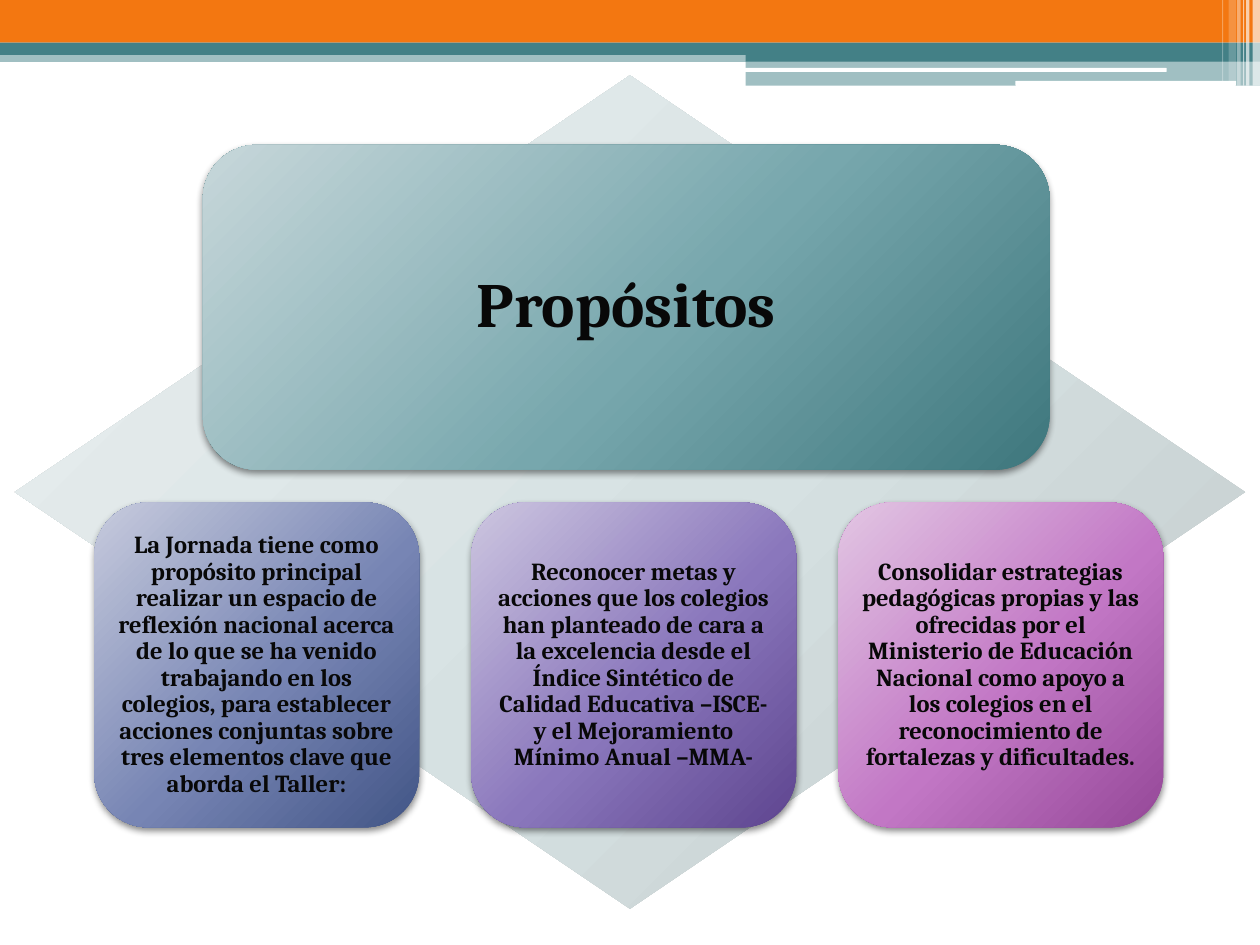
from lxml import etree
from pptx import Presentation
from pptx.dml.color import RGBColor
from pptx.enum.shapes import MSO_SHAPE
from pptx.enum.text import MSO_ANCHOR, MSO_AUTO_SIZE, PP_ALIGN
from pptx.oxml.ns import qn
from pptx.util import Cm, Pt

RECTANGLE = MSO_SHAPE.RECTANGLE
ROUNDED = MSO_SHAPE.ROUNDED_RECTANGLE
DIAMOND = MSO_SHAPE.DIAMOND
MIDDLE = MSO_ANCHOR.MIDDLE
CENTER = PP_ALIGN.CENTER
NO_AUTOFIT = MSO_AUTO_SIZE.NONE

FONT = "Cambria"
COLORS = {"orange": "F37711", "teal": "438086", "white": "FFFFFF", "text": "080808", "shadow": "000000"}
GRADIENTS = {
    "pale": ("EBF0F1", "D6E1E2", "C1C9CA"),
    "teal": ("C7D7DA", "77A7AD", "3E777D"),
    "blue": ("C7CBDD", "7785B4", "425586"),
    "violet": ("CDC6E0", "8A77BC", "5E458F"),
    "pink": ("E2C6E3", "C277C5", "954898"),
}
GRADIENT_STOPS = (0, 55, 100)
GRADIENT_CENTER = {"l": -40, "t": -90, "r": 140, "b": 190}

# Content; lengths in centimetres
SLIDE_SIZE = (25.4, 19.05)
TITLE = "Propósitos"
PURPOSES = [
    (1.9, "blue",
     "La Jornada tiene como propósito principal realizar un espacio de reflexión nacional "
     "acerca de lo que se ha venido trabajando en los colegios, para establecer acciones "
     "conjuntas sobre tres elementos clave que aborda el Taller:"),
    (9.5, "violet",
     "Reconocer metas y acciones que los colegios han planteado de cara a la excelencia "
     "desde el Índice Sintético de Calidad Educativa –ISCE- y el Mejoramiento Mínimo Anual –MMA-"),
    (16.9, "pink",
     "Consolidar estrategias pedagógicas propias y las ofrecidas por el Ministerio de Educación "
     "Nacional como apoyo a los colegios en el reconocimiento de fortalezas y dificultades."),
]
# Header bands: kind, left, top, width, height, color, opacity in percent
BANDS = [
    (RECTANGLE, 0, 1.02, 25.4, 0.23, "teal", 50),
    (RECTANGLE, 0, 0, 25.4, 0.86, "orange", 100),
    (RECTANGLE, 0, 0.86, 25.4, 0.25, "teal", 100),
    (RECTANGLE, 15.03, 0.99, 10.37, 0.25, "teal", 100),
    (RECTANGLE, 15.03, 1.23, 10.37, 0.5, "teal", 50),
    (ROUNDED, 15.01, 1.37, 8.51, 0.08, "white", 100),
    (ROUNDED, 20.47, 1.63, 4.45, 0.1, "white", 100),
]
# White strips at the right edge: left, width, height, opacity in percent
STRIPS = [
    (25.25, 0.15, 1.73, 65),
    (25.12, 0.07, 1.73, 65),
    (25.06, 0.02, 1.73, 60),
    (24.94, 0.07, 1.73, 40),
    (24.77, 0.15, 1.63, 20),
    (24.64, 0.02, 1.63, 30),
]
DIAMOND_BOX = (0.3, 1.52, 24.8, 16.8)
TITLE_CARD = (4.09, 2.92, 17.07, 6.55)
CARD_TOP, CARD_SIZE = 10.13, 6.55
CORNER_INSET = 0.32


def add_element(parent, tag, **attributes):
    return etree.SubElement(parent, qn(tag), {name: str(value) for name, value in attributes.items()})


def add_color(parent, color, opacity):
    element = add_element(parent, "a:srgbClr", val=color)
    if opacity < 100:
        add_element(element, "a:alpha", val=opacity * 1000)


def add_plain_shape(slide, kind, box):
    shape = slide.shapes.add_shape(kind, *(Cm(length) for length in box))
    shape.shadow.inherit = False
    shape.line.fill.background()
    return shape


def add_band(slide, kind, box, color, opacity):
    shape = add_plain_shape(slide, kind, box)
    shape.fill.solid()
    shape.fill.fore_color.rgb = RGBColor.from_string(COLORS[color])
    if opacity < 100:
        color_element = shape._element.spPr.find(".//" + qn("a:srgbClr"))
        add_element(color_element, "a:alpha", val=opacity * 1000)


def add_gradient_shape(slide, kind, box, gradient):
    shape = add_plain_shape(slide, kind, box)
    shape.fill.background()
    properties = shape._element.spPr
    fill = etree.Element(qn("a:gradFill"), rotWithShape="1")
    stops = add_element(fill, "a:gsLst")
    for position, color in zip(GRADIENT_STOPS, GRADIENTS[gradient]):
        add_color(add_element(stops, "a:gs", pos=position * 1000), color, 100)
    path = add_element(fill, "a:path", path="circle")
    add_element(path, "a:fillToRect", **{side: value * 1000 for side, value in GRADIENT_CENTER.items()})
    properties.replace(properties.find(qn("a:noFill")), fill)
    return shape


def add_card(slide, box, gradient):
    card = add_gradient_shape(slide, ROUNDED, box, gradient)
    effects = card._element.spPr.find(qn("a:effectLst"))
    shadow = add_element(effects, "a:outerShdw", blurRad=Pt(4), dist=Pt(2), dir=90 * 60000, rotWithShape=0)
    add_color(shadow, COLORS["shadow"], 45)
    return card


def write_text(shape, text, size, margin):
    frame = shape.text_frame
    frame.text = text
    frame.word_wrap = True
    frame.auto_size = NO_AUTOFIT
    frame.vertical_anchor = MIDDLE
    frame.margin_left = frame.margin_right = frame.margin_top = frame.margin_bottom = Cm(margin)
    paragraph = frame.paragraphs[0]
    paragraph.alignment = CENTER
    paragraph.line_spacing = 0.9
    font = paragraph.runs[0].font
    font.name, font.size, font.bold = FONT, Pt(size), True
    font.color.rgb = RGBColor.from_string(COLORS["text"])


def main():
    presentation = Presentation()
    presentation.slide_width, presentation.slide_height = (Cm(length) for length in SLIDE_SIZE)
    slide = presentation.slides.add_slide(presentation.slide_layouts[5])

    # Header decoration
    for kind, left, top, width, height, color, opacity in BANDS:
        add_band(slide, kind, (left, top, width, height), color, opacity)
    for left, width, height, opacity in STRIPS:
        add_band(slide, RECTANGLE, (left, 0, width, height), "white", opacity)

    # Diamond and title card, with the title in front
    add_gradient_shape(slide, DIAMOND, DIAMOND_BOX, "pale")
    add_card(slide, TITLE_CARD, "teal")
    title = slide.shapes.title
    left, top, width, height = TITLE_CARD
    title.left, title.top = Cm(left + CORNER_INSET), Cm(top + CORNER_INSET)
    title.width, title.height = Cm(width - 2 * CORNER_INSET), Cm(height - 2 * CORNER_INSET)
    write_text(title, TITLE, 36, 0.38)
    slide.shapes._spTree.append(title._element)

    # Purpose cards
    for left, gradient, text in PURPOSES:
        card = add_card(slide, (left, CARD_TOP, CARD_SIZE, CARD_SIZE), gradient)
        write_text(card, text, 14, 0.15)

    presentation.save("out.pptx")


if __name__ == "__main__":
    main()
